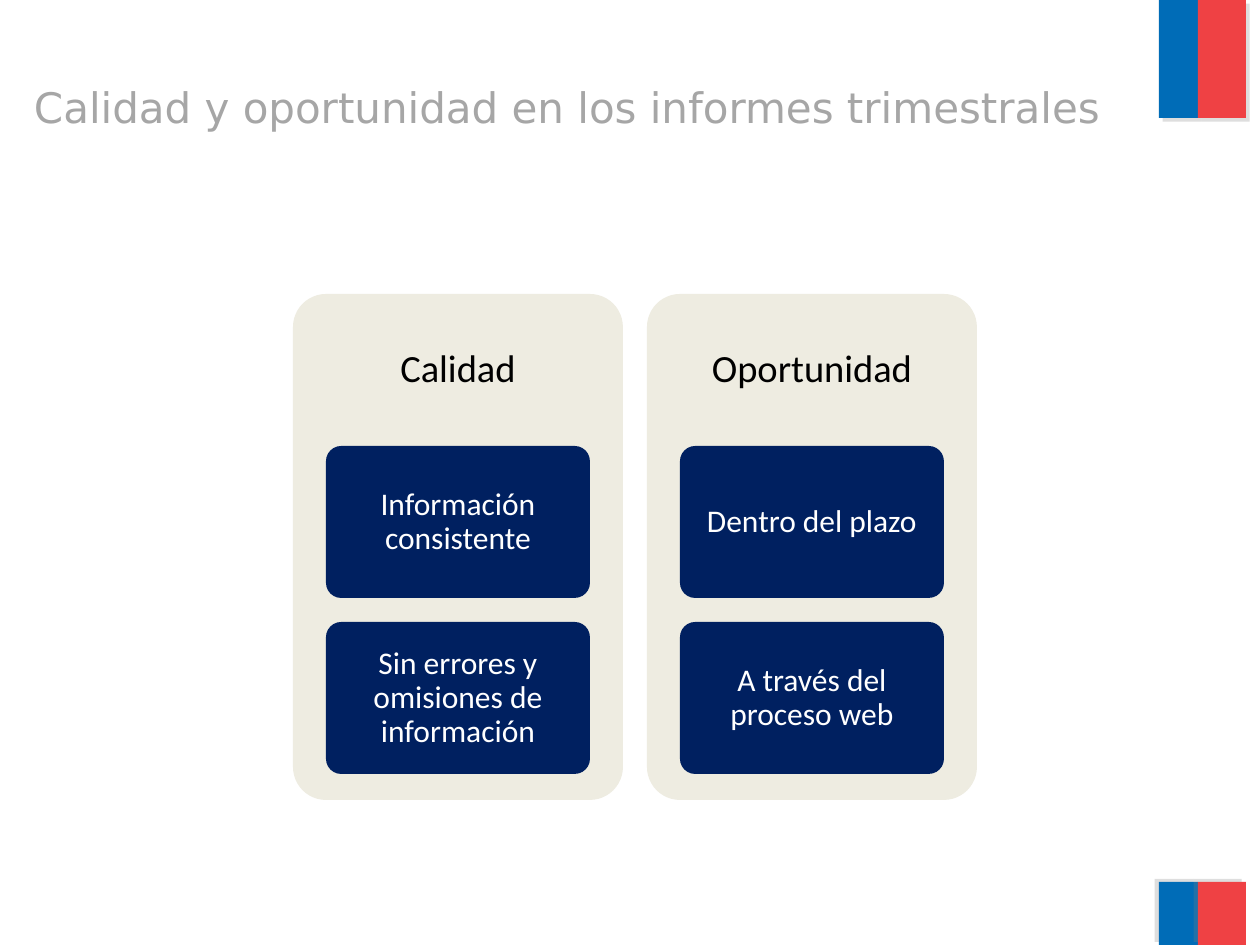
from dataclasses import dataclass

from lxml import etree
from pptx import Presentation
from pptx.dml.color import RGBColor
from pptx.enum.shapes import MSO_SHAPE
from pptx.enum.text import MSO_ANCHOR, PP_ALIGN
from pptx.oxml.ns import qn
from pptx.util import Pt

RECTANGLE = MSO_SHAPE.RECTANGLE
ROUNDED = MSO_SHAPE.ROUNDED_RECTANGLE
MIDDLE = MSO_ANCHOR.MIDDLE
LEFT, CENTER = PP_ALIGN.LEFT, PP_ALIGN.CENTER
EMU_PER_PX = 914400 / 126


@dataclass(frozen=True)
class Theme:
    blue: str = "006CB7"
    red: str = "EF4144"
    shadow: str = "808080"
    card: str = "EEECE1"
    tile: str = "002060"
    title: str = "A6A6A6"
    heading: str = "000000"
    tile_text: str = "FFFFFF"
    title_font: str = "DejaVu Sans"
    body_font: str = "Calibri"
    title_size: int = 24
    heading_size: int = 22
    tile_size: int = 18


THEME = Theme()
COLUMNS = [
    ("Calidad", ["Información consistente",
                 "Sin errores y omisiones de información"]),
    ("Oportunidad", ["Dentro del plazo", "A través del proceso web"]),
]


def px(length):
    return round(length * EMU_PER_PX)


def add_block(page, kind, box, color):
    block = page.shapes.add_shape(kind, *map(px, box))
    block.shadow.inherit = False
    block.fill.solid()
    block.fill.fore_color.rgb = RGBColor.from_string(color)
    block.line.fill.background()
    if kind == ROUNDED:
        block.adjustments[0] = 0.1
    return block


def add_shadow(block, degrees):
    effects = block._element.spPr.find(qn("a:effectLst"))
    shadow = etree.SubElement(effects, qn("a:outerShdw"), blurRad="0",
                              dist=str(Pt(3)), dir=str(degrees * 60000),
                              algn="ctr", rotWithShape="0")
    color = etree.SubElement(shadow, qn("a:srgbClr"), val=THEME.shadow)
    etree.SubElement(color, qn("a:alpha"), val="25000")


def write_text(shape, text, font, size, color, align, insets, spacing=1.0):
    frame = shape.text_frame
    frame.word_wrap = True
    frame.vertical_anchor = MIDDLE
    (frame.margin_left, frame.margin_top,
     frame.margin_right, frame.margin_bottom) = map(px, insets)
    para = frame.paragraphs[0]
    para.alignment = align
    para.line_spacing = spacing
    span = para.add_run()
    span.text = text
    span.font.name = font
    span.font.size = Pt(size)
    span.font.color.rgb = RGBColor.from_string(color)


def add_band(page, box, shadow_degrees):
    """Two-colour band at the right edge of the page."""
    left, top, width, height = box
    blue_width = 39
    parts = [(left, blue_width, THEME.blue),
             (left + blue_width, width - blue_width, THEME.red)]
    for part_left, part_width, color in parts:
        block = add_block(page, RECTANGLE,
                          (part_left, top, part_width, height), color)
        add_shadow(block, shadow_degrees)


def add_title(page, box, text):
    title = page.shapes.add_textbox(*map(px, box))
    write_text(title, text, THEME.title_font, THEME.title_size, THEME.title,
               LEFT, (12, 18, 12, 6))


def add_column(page, box, heading, items):
    """Card with a heading above a stack of tiles."""
    left, top, width, height = box
    heading_height = tile_height = 152
    side, gap = 33, 24
    add_block(page, ROUNDED, box, THEME.card)

    # Heading
    label = page.shapes.add_textbox(
        *map(px, (left, top, width, heading_height)))
    write_text(label, heading, THEME.body_font, THEME.heading_size,
               THEME.heading, CENTER, (12, 12, 12, 12), 0.9)

    # Tiles
    for row, item in enumerate(items):
        tile_top = top + heading_height + row * (tile_height + gap)
        tile = add_block(page, ROUNDED,
                         (left + side, tile_top, width - 2 * side,
                          tile_height), THEME.tile)
        write_text(tile, item, THEME.body_font, THEME.tile_size,
                   THEME.tile_text, CENTER, (6, 5, 6, 5), 0.9)


def add_columns(page, box, columns):
    left, top, width, height = box
    gap = 24
    column_width = (width - gap * (len(columns) - 1)) // len(columns)
    for index, (heading, items) in enumerate(columns):
        column_left = left + index * (column_width + gap)
        add_column(page, (column_left, top, column_width, height),
                   heading, items)


def main():
    deck = Presentation()
    deck.slide_width, deck.slide_height = px(1260), px(945)
    page = deck.slides.add_slide(deck.slide_layouts[6])

    # Bands at the top and bottom corners
    add_band(page, (1159, 0, 87, 118), 45)
    add_band(page, (1159, 882, 87, 63), 215)

    # Content
    add_columns(page, (293, 294, 684, 506), COLUMNS)
    add_title(page, (22, 22, 1125, 157),
              "Calidad y oportunidad en los informes trimestrales")
    deck.save("out.pptx")


if __name__ == "__main__":
    main()
